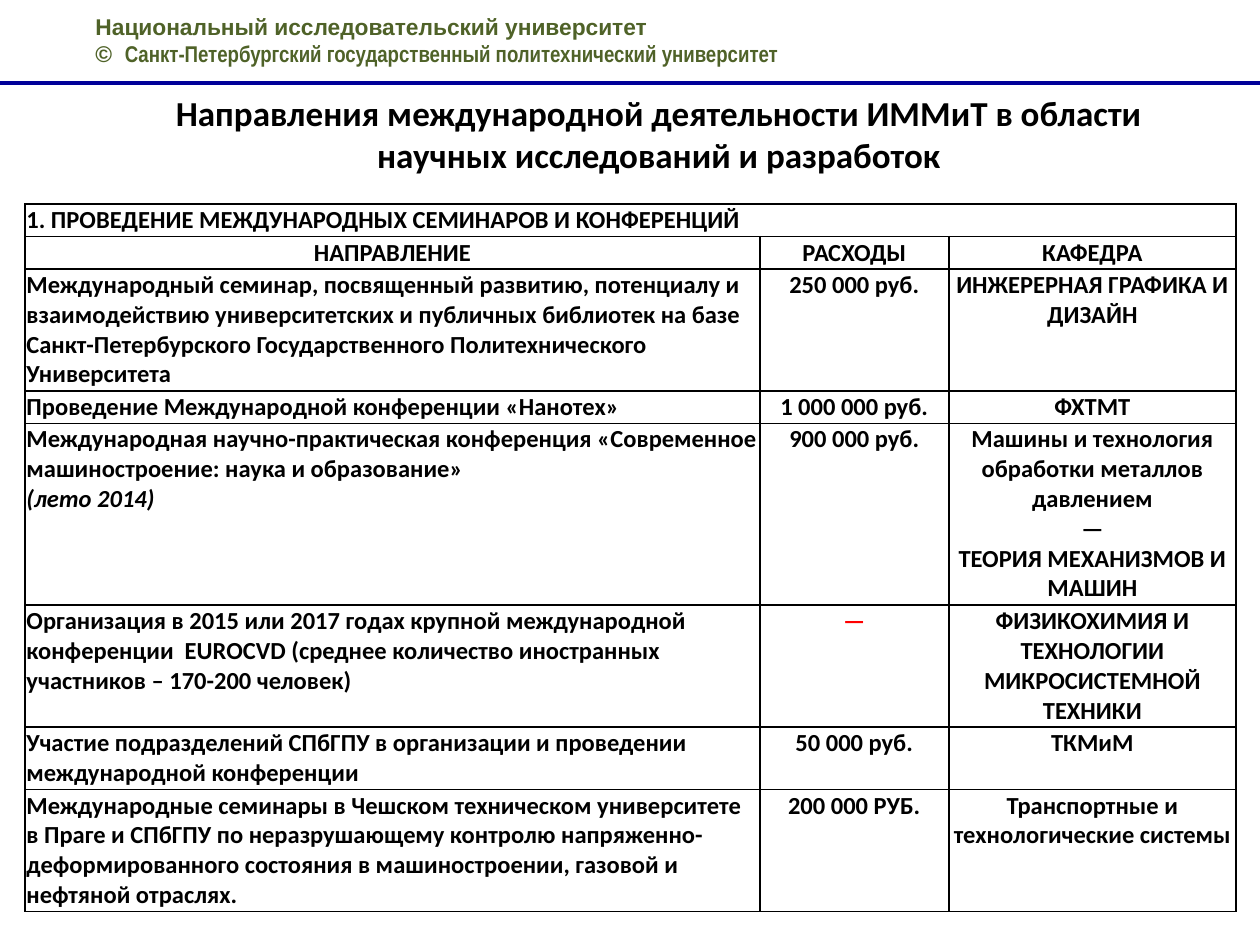
from dataclasses import dataclass

from lxml import etree
from pptx import Presentation
from pptx import util as u
from pptx.dml.color import RGBColor
from pptx.enum import shapes, text
from pptx.oxml.ns import qn

LEFT, CENTER = text.PP_ALIGN.LEFT, text.PP_ALIGN.CENTER


@dataclass(frozen=True)
class Theme:
    ink: str = "000000"
    paper: str = "FFFFFF"
    olive: str = "4F6228"
    navy: str = "000099"
    red: str = "FF0000"
    body_font: str = "Calibri"
    header_font: str = "Arial"
    narrow_font: str = "Arial Narrow"
    header_size: int = 13
    title_size: int = 20
    table_size: int = 14
    line_height: float = 1.22
    cell_inset: float = 0.01


class SlideBuilder:
    """Places elements on a grid of 100 columns by 75 rows."""

    def __init__(self, deck, theme):
        self.theme = theme
        self.column = deck.slide_width / 100
        self.row = deck.slide_height / 75
        self.page = deck.slides.add_slide(deck.slide_layouts[6])

    def place(self, x, y, *size):
        """Turn grid units, x and y in turn, into lengths."""
        steps = (self.column, self.row) * 2
        return [u.Emu(round(n * step)) for n, step in zip((x, y, *size), steps)]

    def style(self, span, font, size, color, italic=None):
        span.font.name = font
        span.font.size = u.Pt(size)
        span.font.bold = True
        span.font.italic = italic
        span.font.color.rgb = RGBColor.from_string(color)

    def text(self, area, paragraphs, size, color, align=LEFT):
        """Each paragraph is a list of (wording, font) pairs."""
        frame = self.page.shapes.add_textbox(*self.place(*area)).text_frame
        frame.word_wrap = True
        for index, spans in enumerate(paragraphs):
            para = frame.add_paragraph() if index else frame.paragraphs[0]
            para.alignment = align
            for wording, font in spans:
                span = para.add_run()
                span.text = wording
                self.style(span, font, size, color)

    def line(self, start, end, color, width):
        rule = self.page.shapes.add_connector(
            shapes.MSO_CONNECTOR.STRAIGHT, *self.place(*start), *self.place(*end))
        rule.line.color.rgb = RGBColor.from_string(color)
        rule.line.width = u.Pt(width)
        etree.SubElement(rule._element.spPr, qn("a:effectLst"))

    def border(self, cell):
        properties = cell._tc.get_or_add_tcPr()
        for side in ("lnL", "lnR", "lnT", "lnB"):
            edge = etree.SubElement(properties, qn(f"a:{side}"), w=str(u.Pt(1)))
            fill = etree.SubElement(edge, qn("a:solidFill"))
            etree.SubElement(fill, qn("a:srgbClr"), val=self.theme.ink)

    def cell(self, cell, wording, align, colors, italics):
        theme = self.theme
        self.border(cell)
        cell.fill.solid()
        cell.fill.fore_color.rgb = RGBColor.from_string(theme.paper)
        inset = u.Inches(theme.cell_inset)
        cell.margin_left = cell.margin_right = inset
        cell.margin_top = cell.margin_bottom = inset
        cell.text_frame.text = wording
        for para in cell.text_frame.paragraphs:
            para.alignment = align
            for span in para.runs:
                self.style(span, theme.body_font, theme.table_size,
                           colors.get(span.text, theme.ink),
                           span.text in italics)

    def table(self, corner, widths, heading, header, records, colors, italics):
        """Records are (line count, cell wordings); line counts set the heights."""
        theme = self.theme
        rows = [(1, (heading, "", "")), (1, header), *records]
        line = theme.table_size * theme.line_height / 72
        heights = [u.Inches(n * line + 2 * theme.cell_inset) for n, _ in rows]
        width = round(sum(widths) * self.column)
        table = self.page.shapes.add_table(
            len(rows), len(widths), *self.place(*corner), width, sum(heights)).table
        table.first_row = table.horz_banding = False
        for column, share in zip(table.columns, widths):
            column.width = round(share * self.column)
        for r, (_, wordings) in enumerate(rows):
            table.rows[r].height = heights[r]
            for c, wording in enumerate(wordings):
                align = LEFT if c == 0 and r != 1 else CENTER
                self.cell(table.cell(r, c), wording, align, colors, italics)
        table.cell(0, 0).merge(table.cell(0, len(widths) - 1))


HEADER = ("НАПРАВЛЕНИЕ", "РАСХОДЫ", "КАФЕДРА")
SEASON = "(лето 2014)"
NO_COST = "—"
EVENTS = [
    (4, ("Международный семинар, посвященный развитию, потенциалу и "
         "взаимодействию университетских и публичных библиотек на базе "
         "Санкт-Петербурского Государственного Политехнического Университета",
         "250 000 руб.", "ИНЖЕРЕРНАЯ ГРАФИКА И ДИЗАЙН")),
    (1, ("Проведение Международной конференции «Нанотех»",
         "1 000 000 руб.", "ФХТМТ")),
    (6, ("Международная научно-практическая конференция «Современное "
         f"машиностроение: наука и образование»\n{SEASON}",
         "900 000 руб.",
         "Машины и технология обработки металлов давлением\n—\n"
         "ТЕОРИЯ МЕХАНИЗМОВ И МАШИН")),
    (4, ("Организация в 2015 или 2017 годах крупной международной "
         "конференции  EUROCVD (среднее количество иностранных "
         "участников – 170-200 человек)",
         NO_COST, "ФИЗИКОХИМИЯ И ТЕХНОЛОГИИ МИКРОСИСТЕМНОЙ ТЕХНИКИ")),
    (2, ("Участие подразделений СПбГПУ в организации и проведении "
         "международной конференции", "50 000 руб.", "ТКМиМ")),
    (4, ("Международные семинары в Чешском техническом университете в Праге "
         "и СПбГПУ по неразрушающему контролю напряженно-деформированного "
         "состояния в машиностроении, газовой и нефтяной отраслях.",
         "200 000 РУБ.", "Транспортные и технологические системы")),
]


def main():
    theme = Theme()
    deck = Presentation()
    deck.slide_width, deck.slide_height = u.Inches(10), u.Inches(7.5)
    slide = SlideBuilder(deck, theme)

    slide.text((6.6, 0.5, 78, 5.4), [
        [("Национальный исследовательский университет", theme.header_font)],
        [("©  ", theme.header_font),
         ("Санкт-Петербургский государственный политехнический университет",
          theme.narrow_font)],
    ], theme.header_size, theme.olive)
    slide.line((0, 6.6), (100, 6.6), theme.navy, 2)
    slide.text((9.8, 6.8, 85, 7.1), [
        [("Направления международной деятельности ИММиТ в области "
          "научных исследований и разработок", theme.body_font)],
    ], theme.title_size, theme.ink, CENTER)
    slide.table((2, 16.2), (58.3, 15, 22.8),
                "1. ПРОВЕДЕНИЕ МЕЖДУНАРОДНЫХ СЕМИНАРОВ И КОНФЕРЕНЦИЙ",
                HEADER, EVENTS, colors={}, italics={SEASON})

    table = slide.page.shapes[-1].table
    cost = next(row.cells[1] for row in table.rows if row.cells[1].text == NO_COST)
    cost.text_frame.paragraphs[0].runs[0].font.color.rgb = (
        RGBColor.from_string(theme.red))
    deck.save("out.pptx")


if __name__ == "__main__":
    main()
